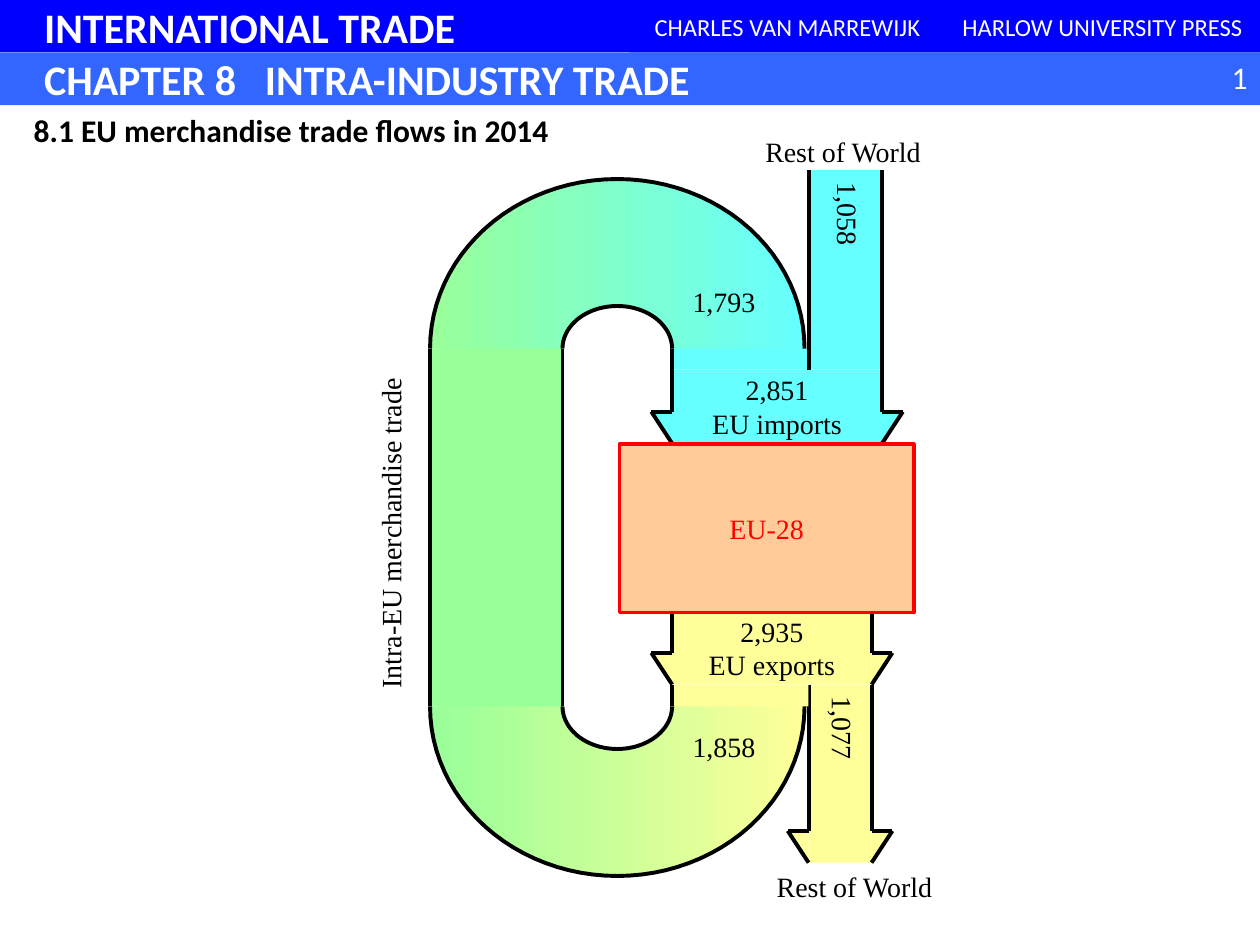
from math import cos, pi, sin

from lxml import etree
from pptx import Presentation
from pptx.dml.color import RGBColor
from pptx.enum.shapes import MSO_CONNECTOR, MSO_SHAPE
from pptx.enum.text import MSO_ANCHOR, MSO_AUTO_SIZE, PP_ALIGN
from pptx.oxml.ns import qn
from pptx.util import Cm, Pt

RECT, TRIANGLE = MSO_SHAPE.RECTANGLE, MSO_SHAPE.RIGHT_TRIANGLE
LEFT, CENTER, RIGHT = PP_ALIGN.LEFT, PP_ALIGN.CENTER, PP_ALIGN.RIGHT
TOP, MIDDLE = MSO_ANCHOR.TOP, MSO_ANCHOR.MIDDLE
SANS, SERIF = "Calibri", "Times New Roman"

BLACK, WHITE, RED = "000000", "FFFFFF", "FF0000"
NAVY, BLUE = "0000FF", "3366FF"
IMPORTS, EXPORTS, INTRA, REGION = "66FFFF", "FFFF99", "99FF99", "FFCC99"

# Content, lengths in cm
HEADING = "8.1 EU merchandise trade flows in 2014"
BAR = 1.06
HEADER = [  # text, left, top, width, fill, size, bold, align, inset
    ("INTERNATIONAL TRADE", 0, 0, 25.4, NAVY, 24, True, LEFT, 0.89),
    ("CHARLES VAN MARREWIJK", 12.7, 0, 6.35, NAVY, 14, False, CENTER, 0.25),
    ("HARLOW UNIVERSITY PRESS", 19.05, 0, 6.35, NAVY, 14, False, CENTER, 0.25),
    ("CHAPTER 8\tINTRA-INDUSTRY TRADE", 0, BAR, 25.4, BLUE, 24, True, LEFT, 0.89),
]
CHAPTER_TAB = 4.45

# Edges of the flows
LOOP_LEFT, LOOP_INNER = 8.67, 11.34
FLOW_LEFT, WORLD_LEFT = 13.55, 16.3
EXPORT_RIGHT, IMPORT_RIGHT = 17.57, 17.78
BEND_TOP, IMPORT_TOP, IMPORT_TIP = 7.03, 7.45, 8.94
EXPORT_TOP, EXPORT_TIP, BEND_BOTTOM = 12.32, 13.8, 14.24
WORLD_TOP, WORLD_TIP = 3.43, 17.39
LOOP_CENTER = (LOOP_INNER + FLOW_LEFT) / 2
OUTER = (LOOP_CENTER - LOOP_LEFT, 3.42)
INNER = (LOOP_CENTER - LOOP_INNER, 0.86)
WING, HEAD = 0.42, 0.64

ARROWS = [  # text, left, top, right, tip, fill, vertical
    ("2,935\nEU exports", FLOW_LEFT, EXPORT_TOP, EXPORT_RIGHT, EXPORT_TIP, EXPORTS, False),
    ("2,851\nEU imports", FLOW_LEFT, IMPORT_TOP, IMPORT_RIGHT, IMPORT_TIP, IMPORTS, False),
    ("1,077", WORLD_LEFT, EXPORT_TIP, EXPORT_RIGHT, WORLD_TIP, EXPORTS, True),
]
BENDS = [(BEND_TOP, -1, IMPORTS), (BEND_BOTTOM, 1, EXPORTS)]
LABEL_HEIGHT = 1.02
LABELS = [  # text, left, top, width, rotation
    ("Rest of World", 14.81, 2.59, 4.37, 0),
    ("Rest of World", 15.04, 17.4, 4.37, 0),
    ("1,793", 13.54, 5.61, 2.11, 0),
    ("1,858", 13.54, 14.58, 2.11, 0),
    ("Intra-EU merchandise trade", 3.76, 10.24, 8.31, 270),
]

prs = Presentation()
prs.slide_width, prs.slide_height = Cm(25.4), Cm(19.05)
slide = prs.slides.add_slide(prs.slide_layouts[5])
shapes = slide.shapes


def rgb(value):
    return RGBColor.from_string(value)


def write(shape, text, size=16, font=SERIF, color=BLACK, bold=False,
          align=CENTER, anchor=MIDDLE, wrap=False, inset=0.25):
    frame = shape.text_frame
    frame.text = text
    frame.word_wrap, frame.vertical_anchor = wrap, anchor
    frame.auto_size = MSO_AUTO_SIZE.NONE
    frame.margin_left = Cm(inset)
    for paragraph in frame.paragraphs:
        paragraph.alignment = align
        style = paragraph.font
        style.size, style.name, style.bold = Pt(size), font, bold
        style.color.rgb = rgb(color)
    return frame


def block(kind, left, top, width, height, fill, line=None, rotation=0):
    shape = shapes.add_shape(kind, Cm(left), Cm(top), Cm(width), Cm(height))
    shape.shadow.inherit = False
    shape.rotation = rotation
    shape.fill.solid()
    shape.fill.fore_color.rgb = rgb(fill)
    if line:
        shape.line.color.rgb, shape.line.width = rgb(line), Pt(2.25)
    else:
        shape.line.fill.background()
    return shape


def label(text, left, top, width, rotation=0, **style):
    box = shapes.add_textbox(Cm(left), Cm(top), Cm(width), Cm(LABEL_HEIGHT))
    box.rotation = rotation
    write(box, text, anchor=TOP, **style)


def edge(*points):
    for (x1, y1), (x2, y2) in zip(points, points[1:]):
        line = shapes.add_connector(MSO_CONNECTOR.STRAIGHT, Cm(x1), Cm(y1), Cm(x2), Cm(y2))
        line.line.color.rgb, line.line.width = rgb(BLACK), Pt(2.25)
        etree.SubElement(line._element.spPr, qn("a:effectLst"))


def shaft(text, left, top, right, bottom, fill, vertical):
    body = block(RECT, left, top, right - left, bottom - top, fill)
    frame = write(body, text)
    if vertical:
        frame._txBody.bodyPr.set("vert", "eaVert")


def arrow(text, left, top, right, tip, fill, vertical):
    neck = tip - HEAD
    block(TRIANGLE, left - WING, neck, WING, HEAD, fill, rotation=180)
    # A quarter turn swaps the sides of the right wing around its centre
    turn = (HEAD - WING) / 2
    block(TRIANGLE, right - turn, neck + turn, HEAD, WING, fill, rotation=90)
    shaft(text, left, top, right, tip, fill, vertical)
    for x, side in ((left, -WING), (right, WING)):
        edge((x, top), (x, neck), (x + side, neck), (x, tip))


def half_ellipse(radii, y, direction, steps=48):
    rx, ry = radii
    return [(LOOP_CENTER - rx * cos(pi * i / steps), y + direction * ry * sin(pi * i / steps))
            for i in range(steps + 1)]


def outline(points, close):
    points = [(Cm(x), Cm(y)) for x, y in points]
    builder = shapes.build_freeform(*points[0])
    builder.add_line_segments(points[1:], close=close)
    shape = builder.convert_to_shape()
    shape.shadow.inherit = False
    return shape


# Header bars, page number and heading
for text, left, top, width, fill, size, bold, align, inset in HEADER:
    bar = block(RECT, left, top, width, BAR, fill)
    frame = write(bar, text, size, SANS, WHITE, bold, align, wrap=True, inset=inset)
    if "\t" in text:
        tabs = etree.Element(qn("a:tabLst"))
        etree.SubElement(tabs, qn("a:tab"), pos=str(Cm(CHAPTER_TAB)), algn="l")
        frame.paragraphs[0]._p.get_or_add_pPr().insert(0, tabs)
label("1", 23.7, 1.04, 1.7, size=18, font=SANS, color=WHITE, align=RIGHT, wrap=True)

heading = shapes.title
heading.left, heading.top, heading.width, heading.height = Cm(0.43), Cm(2.11), Cm(14), Cm(LABEL_HEIGHT)
write(heading, HEADING, 18, SANS, bold=True, align=LEFT, anchor=TOP, wrap=True)

# Arrows and the trading region
for flow in ARROWS:
    arrow(*flow)
region = block(RECT, 12.49, 8.96, 5.93, 3.39, REGION, RED)
write(region, "EU-28", color=RED)

# Loop of trade inside the region: fills first, then outlines
for y, direction, color in BENDS:
    ring = half_ellipse(OUTER, y, direction) + half_ellipse(INNER, y, direction)[::-1]
    bend = outline(ring, True)
    bend.fill.gradient()
    bend.fill.gradient_angle = 0
    for stop, shade in zip(bend.fill.gradient_stops, (INTRA, color)):
        stop.color.rgb = rgb(shade)
    bend.line.fill.background()
loop_width = WORLD_LEFT - FLOW_LEFT
block(RECT, FLOW_LEFT, BEND_TOP, loop_width, IMPORT_TOP - BEND_TOP, IMPORTS)
block(RECT, FLOW_LEFT, EXPORT_TIP, loop_width, BEND_BOTTOM - EXPORT_TIP, EXPORTS)
block(RECT, LOOP_LEFT, BEND_TOP, LOOP_INNER - LOOP_LEFT, BEND_BOTTOM - BEND_TOP, INTRA)
for y, direction, _ in BENDS:
    for radii in (INNER, OUTER):
        arc = outline(half_ellipse(radii, y, direction), False)
        arc.fill.background()
        arc.line.color.rgb, arc.line.width = rgb(BLACK), Pt(2.25)
for x in (LOOP_LEFT, LOOP_INNER):
    edge((x, BEND_TOP), (x, BEND_BOTTOM))
edge((FLOW_LEFT, BEND_TOP), (FLOW_LEFT, IMPORT_TOP))
edge((FLOW_LEFT, EXPORT_TIP), (FLOW_LEFT, BEND_BOTTOM))

# Inflow from the rest of the world
shaft("1,058", WORLD_LEFT, WORLD_TOP, IMPORT_RIGHT, IMPORT_TOP, IMPORTS, True)
for x in (WORLD_LEFT, IMPORT_RIGHT):
    edge((x, WORLD_TOP), (x, IMPORT_TOP))

for caption in LABELS:
    label(*caption)

prs.save("out.pptx")
